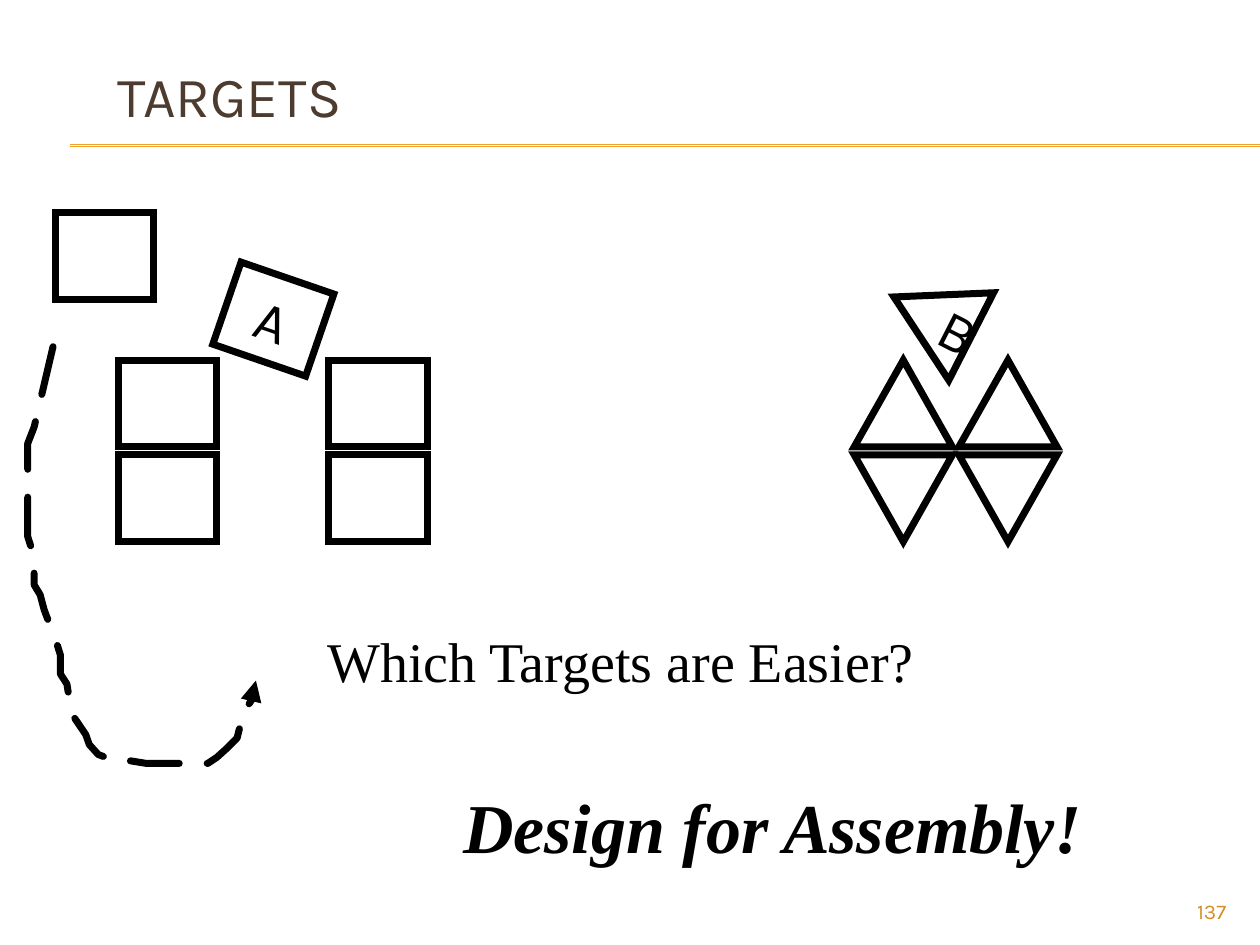
from dataclasses import dataclass
from itertools import product

from lxml import etree
from pptx import Presentation
from pptx.dml.color import RGBColor
from pptx.enum.dml import MSO_LINE
from pptx.enum.shapes import MSO_CONNECTOR, MSO_SHAPE
from pptx.enum.text import MSO_ANCHOR, PP_ALIGN
from pptx.oxml.ns import qn
from pptx.util import Cm, Pt

RECT, TRI = MSO_SHAPE.RECTANGLE, MSO_SHAPE.ISOSCELES_TRIANGLE
STRAIGHT, DASH = MSO_CONNECTOR.STRAIGHT, MSO_LINE.LONG_DASH
TOP, MIDDLE = MSO_ANCHOR.TOP, MSO_ANCHOR.MIDDLE
LEFT, CENTER, RIGHT = PP_ALIGN.LEFT, PP_ALIGN.CENTER, PP_ALIGN.RIGHT


@dataclass(frozen=True)
class Theme:
    ink: str = "000000"
    brown: str = "4E3B30"
    gold: str = "F0A22E"
    amber: str = "D48F29"
    sans: str = "Karla"
    serif: str = "Times New Roman"
    title: float = 32.4
    body: float = 32
    large: float = 40
    small: float = 12
    thin: float = 0.75
    thick: float = 4


THEME = Theme()
WIDE, HIGH = 1.98, 1.75
ROWS = (7.26, 9.17)
SQUARE_COLS = (2.39, 6.63)
TRI_COLS = (17.22, 19.33)
TRAIL = [
    (1.07, 6.99), (0.69, 8.61), (0.56, 8.94), (0.56, 10.82), (0.64, 11.07),
    (0.64, 11.28), (0.69, 11.46), (0.69, 11.79), (0.81, 11.99), (0.89, 12.29),
    (1.14, 12.95), (1.22, 13.21), (1.22, 13.59), (1.35, 13.79), (1.4, 14.1),
    (1.4, 14.3), (1.52, 14.5), (1.73, 14.81), (1.8, 15.01), (1.98, 15.21),
    (2.31, 15.34), (2.64, 15.34), (2.95, 15.39), (4.19, 15.39), (4.37, 15.27),
    (4.57, 15.09), (4.78, 14.88), (4.83, 14.68), (4.95, 14.5), (4.95, 14.3),
    (5.08, 14.1), (5.08, 13.92), (5.16, 13.72),
]


def add_run(para, text, size, font, color, strong=False):
    run = para.add_run()
    run.text = text
    run.font.size, run.font.name = Pt(size), font
    run.font.color.rgb = RGBColor.from_string(color)
    run.font.bold = run.font.italic = strong


def add_text(slide, box, text, size, font, color,
             align=LEFT, anchor=TOP, strong=False):
    frame = slide.shapes.add_textbox(*map(Cm, box)).text_frame
    frame.word_wrap = True
    frame.vertical_anchor = anchor
    para = frame.paragraphs[0]
    para.alignment = align
    add_run(para, text, size, font, color, strong)


def add_rule(slide, top):
    rule = slide.shapes.add_connector(
        STRAIGHT, Cm(1.42), Cm(top), Cm(25.4), Cm(top))
    rule.line.color.rgb = RGBColor.from_string(THEME.gold)
    rule.line.width = Pt(THEME.thin)
    etree.SubElement(rule.element.spPr, qn("a:effectLst"))


def ink_line(shape):
    """Leave the shape hollow with a thick outline; return the line's XML."""
    shape.shadow.inherit = False
    shape.fill.background()
    shape.line.color.rgb = RGBColor.from_string(THEME.ink)
    shape.line.width = Pt(THEME.thick)
    return shape.line._get_or_add_ln()


def add_part(slide, kind, left, top, turn=0):
    part = slide.shapes.add_shape(
        kind, Cm(left), Cm(top), Cm(WIDE), Cm(HIGH))
    part.rotation = turn
    etree.SubElement(ink_line(part), qn("a:miter"), lim="800000")
    return part


def add_label(part, text, align):
    frame = part.text_frame
    frame.word_wrap = False
    frame.vertical_anchor = MIDDLE
    para = frame.paragraphs[0]
    para.alignment = align
    add_run(para, text, THEME.body, THEME.sans, THEME.ink)
    return frame


def add_trail(slide, points):
    """Draw the dashed open curve that ends in an arrowhead."""
    first, *rest = [(Cm(x), Cm(y)) for x, y in points]
    pen = slide.shapes.build_freeform(*first)
    pen.add_line_segments(rest, close=False)
    trail = pen.convert_to_shape()
    line = ink_line(trail)
    trail.line.dash_style = DASH
    line.set("cap", "rnd")
    etree.SubElement(line, qn("a:round"))
    etree.SubElement(line, qn("a:tailEnd"), type="triangle")


def main():
    deck = Presentation()
    deck.slide_width, deck.slide_height = Cm(25.4), Cm(19.05)
    slide = deck.slides.add_slide(deck.slide_layouts[6])

    for top in (2.92, 2.95):
        add_rule(slide, top)
    add_text(slide, (2.11, 1.07, 21.59, 1.7), "TARGETS", THEME.title,
             THEME.sans, THEME.brown, anchor=MIDDLE)
    add_text(slide, (22.86, 17.98, 2.11, 0.69), "137", THEME.small,
             THEME.sans, THEME.amber, align=RIGHT)

    for left, top in product(SQUARE_COLS, ROWS):
        add_part(slide, RECT, left, top)
    for left, (top, turn) in product(TRI_COLS, zip(ROWS, (0, 180))):
        add_part(slide, TRI, left, top, turn)

    add_part(slide, RECT, 1.12, 4.29)
    add_label(add_part(slide, RECT, 4.52, 5.56, 19), "A", CENTER)
    add_trail(slide, TRAIL)
    frame = add_label(add_part(slide, TRI, 17.81, 5.51, 297.1), "B", LEFT)
    frame._txBody.bodyPr.set("vert", "vert")

    add_text(slide, (9.09, 15.67, 13.36, 1.96), "Design for Assembly!",
             THEME.large, THEME.serif, THEME.ink, strong=True)
    add_text(slide, (6.35, 12.5, 15.27, 1.6), "Which Targets are Easier?",
             THEME.body, THEME.serif, THEME.ink)
    deck.save("out.pptx")


if __name__ == "__main__":
    main()
